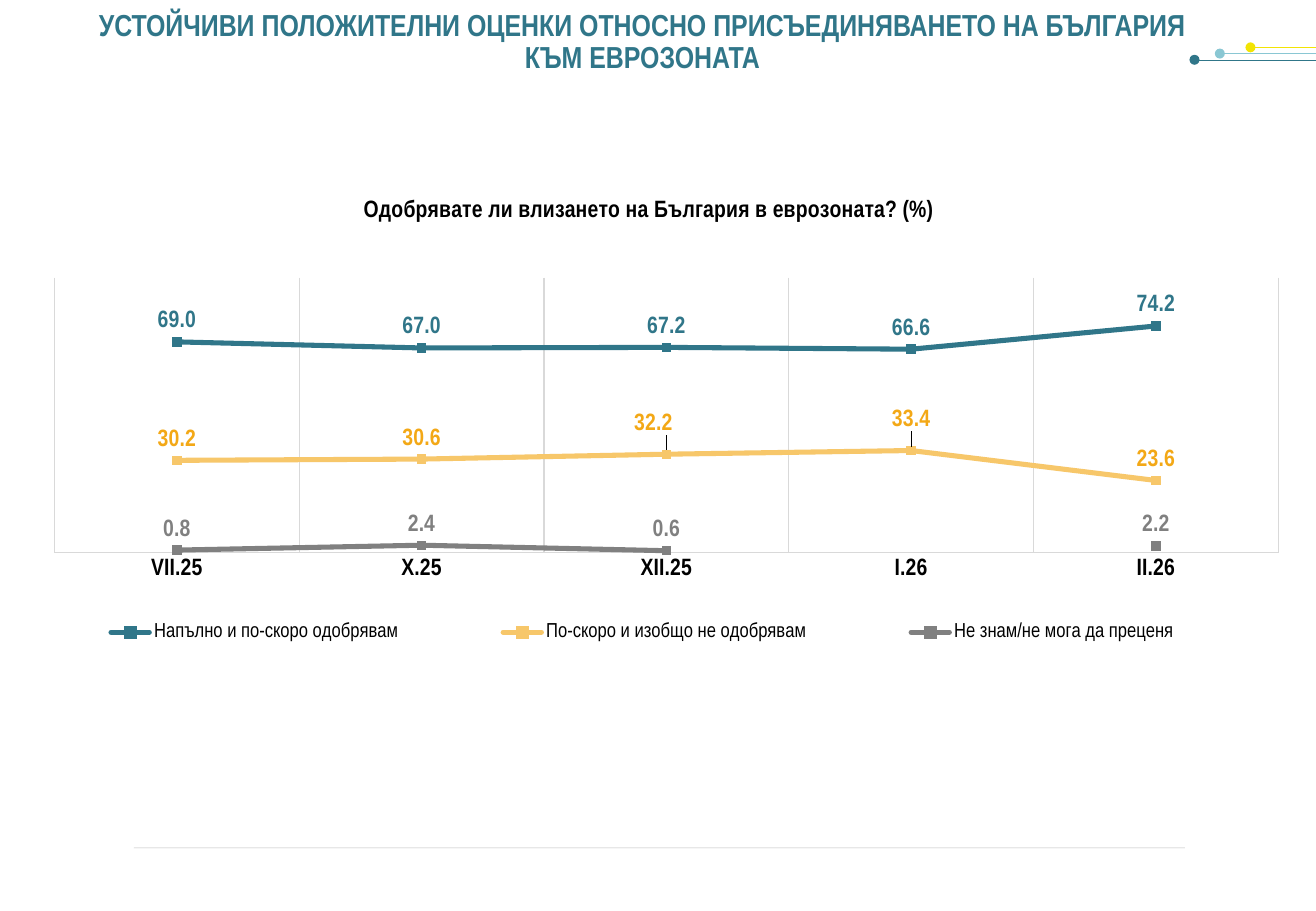
from pptx import Presentation, util as u
from pptx.chart import data as cd
from pptx.dml import color
from pptx.enum import chart as ce, shapes, text
from pptx.oxml import parse_xml, ns

TEAL, GOLD, GREY, BLACK = "307689", "F7C76A", "808080", "000000"
NARROW = "Arial Narrow"


def rgb(code):
    """Turn a hex string into a colour."""
    return color.RGBColor.from_string(code)


def style(font, code, **vals):
    """Set font values and colour."""
    for key, val in vals.items():
        setattr(font, key, val)
    font.color.rgb = rgb(code)


def stroke(line, code, width):
    """Set the colour and width of a line."""
    line.color.rgb = rgb(code)
    line.width = u.Pt(width)


def rule(slide, left, top, right, code, dot=False, alpha=None):
    """Draw a thin level line, with a dot at its start if asked."""
    y = u.Cm(top)
    line = slide.shapes.add_connector(
        shapes.MSO_CONNECTOR.STRAIGHT, u.Cm(left), y, u.Cm(right), y)
    stroke(line.line, code, 0.25)
    props = line._element.spPr
    props.append(parse_xml(f"<a:effectLst {ns.nsdecls('a')}/>"))
    edge = props.find(ns.qn("a:ln"))
    if dot:
        edge.append(parse_xml(f'<a:headEnd {ns.nsdecls("a")} type="oval"/>'))
    if alpha:
        tint = edge.find(".//" + ns.qn("a:srgbClr"))
        tint.append(parse_xml(
            f'<a:alpha {ns.nsdecls("a")} val="{alpha * 1000}"/>'))


def heading(slide, box):
    """Place the centred slide title."""
    shape = slide.shapes.add_textbox(*map(u.Cm, box))
    shape.text_frame.word_wrap = True
    para = shape.text_frame.paragraphs[0]
    para.alignment = text.PP_ALIGN.CENTER
    para.line_spacing = 0.9
    run = para.add_run()
    run.text = ("УСТОЙЧИВИ ПОЛОЖИТЕЛНИ ОЦЕНКИ ОТНОСНО ПРИСЪЕДИНЯВАНЕТО "
                "НА БЪЛГАРИЯ КЪМ ЕВРОЗОНАТА")
    style(run.font, TEAL, size=u.Pt(18), bold=True, name=NARROW)


def layout(x, y, w=None, h=None, inner=False):
    """Build a manual chart layout."""
    rows = [("layoutTarget", "inner")] if inner else []
    if w:
        rows += [("xMode", "edge"), ("yMode", "edge")]
    rows += [(k, v) for k, v in zip("xywh", (x, y, w, h)) if v is not None]
    body = "".join(f'<c:{k} val="{v}"/>' for k, v in rows)
    return parse_xml(f"<c:layout {ns.nsdecls('c')}><c:manualLayout>{body}"
                     "</c:manualLayout></c:layout>")


def place(node, after, *vals, **opts):
    """Put a manual layout behind a child of a chart part."""
    for old in node.findall(ns.qn("c:layout")):
        node.remove(old)
    new = layout(*vals, **opts)
    if after:
        node.find(ns.qn(after)).addnext(new)
    else:
        node.insert(0, new)


def unlead(tags):
    """Turn off the leader lines of moved labels."""
    tags.append(parse_xml(
        f'<c:extLst {ns.nsdecls("c")}>'
        '<c:ext uri="{CE6537A1-D6FC-4f65-9D91-7224C49458BB}" xmlns:c15='
        '"http://schemas.microsoft.com/office/drawing/2012/chart">'
        '<c15:showLeaderLines val="0"/></c:ext></c:extLst>'))


def curve(ser, code, ink, shifts):
    """Format one series with its markers and labels."""
    ser.smooth = False
    stroke(ser.format.line, code, 3)
    for edge in ser._element.xpath("c:spPr/a:ln"):
        edge.set("cap", "rnd")
    mark = ser.marker
    mark.style, mark.size = ce.XL_MARKER_STYLE.SQUARE, 5
    mark.format.fill.solid()
    mark.format.fill.fore_color.rgb = rgb(code)
    stroke(mark.format.line, code, 0.75)
    look = dict(size=u.Pt(14), bold=True, name=NARROW)
    tags = ser.data_labels
    for key, val in dict(show_value=True, number_format="0.0",
                         number_format_is_linked=False,
                         position=ce.XL_LABEL_POSITION.ABOVE).items():
        setattr(tags, key, val)
    style(tags.font, ink, **look)
    for idx, shift in shifts.items():
        tag = ser.points[idx].data_label
        tag.position = ce.XL_LABEL_POSITION.ABOVE
        style(tag.font, ink, **look)
        node = ser._element.xpath(f"c:dLbls/c:dLbl[c:idx/@val={idx}]")[0]
        place(node, "c:idx", *shift)
    unlead(ser._element.find(ns.qn("c:dLbls")))


def trend(slide, box):
    """Place the line chart of approval over time."""
    rows = [
        ("Напълно и по-скоро одобрявам", (69, 67, 67.2, 66.6, 74.2),
         TEAL, TEAL, {}),
        ("По-скоро и изобщо не одобрявам", (30.2, 30.6, 32.2, 33.4, 23.6),
         GOLD, "F3A816", {2: (-0.01, -0.02), 3: (0, -0.02)}),
        ("Не знам/не мога да преценя", (0.8, 2.4, 0.6, None, 2.2),
         GREY, GREY, {}),
    ]
    data = cd.CategoryChartData(number_format="0.0")
    data.categories = ["VII.25", "X.25", "XII.25", "I.26", "II.26"]
    for name, vals, *_ in rows:
        data.add_series(name, vals)
    chart = slide.shapes.add_chart(
        ce.XL_CHART_TYPE.LINE_MARKERS, *map(u.Cm, box), data).chart
    style(chart.font, BLACK, size=u.Pt(14), name=NARROW)

    chart.has_title = True
    para = chart.chart_title.text_frame.paragraphs[0]
    run = para.add_run()
    run.text = "Одобрявате ли влизането на България в еврозоната? (%)"
    style(run.font, BLACK, size=u.Pt(14), bold=True, name=NARROW)
    place(chart.chart_title._element, "c:tx", 0.277, 0.03, 0.44, 0.06)

    chart.has_legend = True
    key = chart.legend
    key.position, key.include_in_layout = ce.XL_LEGEND_POSITION.BOTTOM, False
    style(key.font, BLACK, size=u.Pt(12), name=NARROW)
    place(key._element, "c:legendPos", 0.01, 0.87, 0.97, 0.1)

    axis = chart.category_axis
    axis.major_tick_mark = ce.XL_TICK_MARK.NONE
    axis.has_major_gridlines = True
    style(axis.tick_labels.font, BLACK, size=u.Pt(14), bold=True, name=NARROW)
    for part in (axis, axis.major_gridlines):
        stroke(part.format.line, "D9D9D9", 0.75)
    for attr, val in dict(minimum_scale=0, maximum_scale=90, visible=False,
                          has_major_gridlines=False).items():
        setattr(chart.value_axis, attr, val)

    plot = chart.plots[0]
    plot.vary_by_categories = False
    area = chart._chartSpace.chart.plotArea
    place(area, None, 0.042, 0.203, 0.943, 0.556, inner=True)
    for ser, (_, _, code, ink, shifts) in zip(plot.series, rows):
        curve(ser, code, ink, shifts)


def accent(slide, box):
    """Draw three dotted lines that run to the right edge."""
    left, top, width, height = box
    for dx, step, code in ((0, 2, TEAL), (1.17, 0, "F2E404"),
                           (0.53, 1, "8AC7D3")):
        rule(slide, left + dx, top + step * height / 2, left + width,
             code, dot=True)


def footer(slide, left, top, width):
    """Draw the pale line at the bottom."""
    rule(slide, left, top, left + width, "A6A6A6", alpha=74)


def main():
    """Build and save the slide."""
    deck = Presentation()
    deck.slide_width, deck.slide_height = u.Cm(27.51), u.Cm(19.05)
    slide = deck.slides.add_slide(deck.slide_layouts[6])
    accent(slide, (24.97, 0.99, 2.54, 0.26))
    footer(slide, 2.8, 17.73, 21.97)
    heading(slide, (1.57, 0.08, 23.72, 1.22))
    trend(slide, (0, 3.71, 27.13, 10.34))
    deck.save("out.pptx")


if __name__ == "__main__":
    main()
